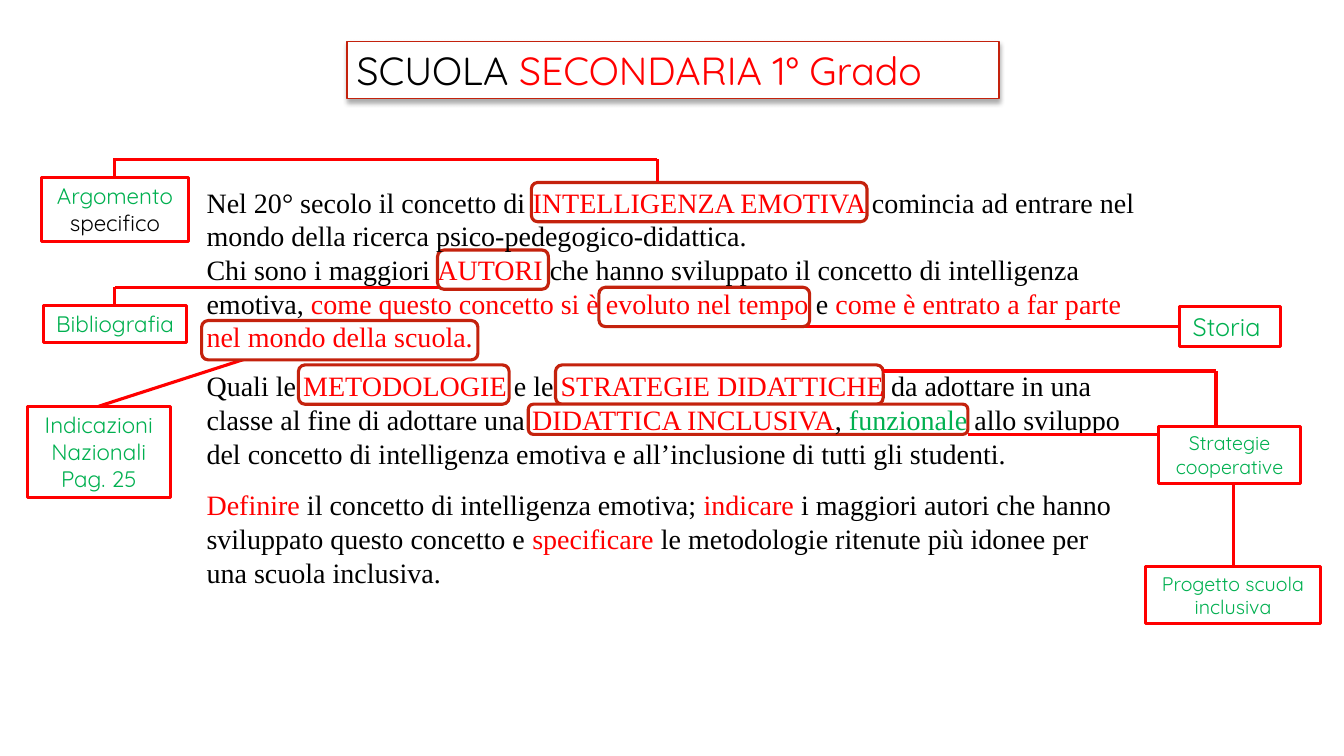
from typing import NamedTuple

from lxml import etree
from pptx import Presentation
from pptx.dml.color import RGBColor
from pptx.enum.shapes import MSO_CONNECTOR, MSO_SHAPE
from pptx.enum.text import MSO_ANCHOR, MSO_AUTO_SIZE, PP_ALIGN
from pptx.oxml import parse_xml
from pptx.oxml.ns import nsdecls, qn
from pptx.util import Emu, Pt

EMU_PER_PX = 9144  # 100 px to the inch
RED, DARK_RED, GREEN, BLACK, WHITE = "FF0000", "C4220D", "00B050", "000000", "FFFFFF"
SANS, SERIF = "Quicksand", "Times New Roman"


class Run(NamedTuple):
    text: str
    color: str = BLACK


class Paragraph(NamedTuple):
    runs: list[Run]
    format: dict = {}


class Area(NamedTuple):
    left: int
    top: int
    width: int
    height: int


class Label(NamedTuple):
    area: Area
    size: int
    paragraphs: list[list[Run]]


class Link(NamedTuple):
    start: tuple[int, int]
    end: tuple[int, int]
    label: str = ""  # label that the start is joined to
    site: int = 0


LINKS_BEHIND_TEXT = [
    Link((98, 403), (284, 343), "indicazioni", 0),
    Link((1170, 324), (682, 324), "storia", 1),
    Link((114, 285), (492, 285)),
]
LINKS_OVER_TEXT = [
    Link((652, 181), (652, 158)),
    Link((652, 158), (114, 158)),
    Link((114, 176), (114, 157), "argomento", 0),
    Link((1206, 368), (876, 368)),
    Link((1206, 423), (1206, 368)),
    Link((1223, 431), (960, 431)),
    Link((1223, 562), (1223, 431), "progetto", 0),
    Link((114, 303), (114, 285), "bibliografia", 0),
]
HIGHLIGHTS = [
    Area(527, 181, 333, 39),
    Area(434, 248, 110, 39),
    Area(594, 285, 209, 39),
    Area(200, 318, 274, 39),
    Area(296, 362, 209, 39),
    Area(551, 362, 325, 39),
    Area(524, 401, 436, 30),
]
LABELS = {
    "argomento": Label(Area(41, 176, 146, 64), 16,
                       [[Run("Argomento", GREEN), Run(" specifico")]]),
    "storia": Label(Area(1170, 304, 100, 40), 18, [[Run("Storia ", GREEN)]]),
    "indicazioni": Label(Area(27, 403, 142, 91), 16,
                         [[Run("Indicazioni Nazionali", GREEN)], [Run("Pag. 25", GREEN)]]),
    "strategie": Label(Area(1149, 423, 141, 57), 14, [[Run("Strategie cooperative", GREEN)]]),
    "progetto": Label(Area(1136, 562, 174, 57), 14, [[Run("Progetto scuola inclusiva", GREEN)]]),
    "bibliografia": Label(Area(43, 303, 142, 37), 16, [[Run("Bibliografia", GREEN)]]),
}
TITLE = [Paragraph([Run("SCUOLA "), Run("SECONDARIA 1° Grado", RED)],
                   {"alignment": PP_ALIGN.LEFT})]
BODY = [
    Paragraph([
        Run("Nel 20° secolo il concetto di "),
        Run("INTELLIGENZA EMOTIVA ", RED),
        Run("comincia ad entrare nel mondo della ricerca psico-pedegogico-didattica."),
    ]),
    Paragraph([
        Run("Chi sono i maggiori "),
        Run("AUTORI", RED),
        Run(" che hanno sviluppato il concetto di intelligenza emotiva, "),
        Run("come questo concetto si è evoluto nel tempo ", RED),
        Run("e "),
        Run("come è entrato a far parte nel mondo della scuola.", RED),
    ]),
    Paragraph([
        Run("Quali le "),
        Run("METODOLOGIE", RED),
        Run(" e le "),
        Run("STRATEGIE DIDATTICHE ", RED),
        Run("da adottare in una classe al fine di adottare una "),
        Run("DIDATTICA INCLUSIVA", RED),
        Run(", "),
        Run("funzionale", GREEN),
        Run(" allo sviluppo del concetto di intelligenza emotiva e all’inclusione "
            "di tutti gli studenti."),
    ], {"space_before": Pt(11)}),
    Paragraph([
        Run("Definire", RED),
        Run(" il concetto di intelligenza emotiva; "),
        Run("indicare", RED),
        Run(" i maggiori autori che hanno sviluppato questo concetto e "),
        Run("specificare ", RED),
        Run("le metodologie ritenute più idonee per una scuola inclusiva."),
    ], {"space_before": Pt(13)}),
]


def px(length: int) -> Emu:
    return Emu(length * EMU_PER_PX)


def rgb(color: str) -> RGBColor:
    return RGBColor.from_string(color)


def apply(target, values: dict) -> None:
    for name, value in values.items():
        setattr(target, name, value)


def style_line(line, color: str, width: float) -> None:
    line.color.rgb = rgb(color)
    line.width = Pt(width)


def add_box(slide, area: Area, color: str, width: float = 2.25, preset=MSO_SHAPE.RECTANGLE):
    box = slide.shapes.add_shape(preset, *map(px, area))
    box.shadow.inherit = False
    box.fill.solid()
    box.fill.fore_color.rgb = rgb(WHITE)
    style_line(box.line, color, width)
    return box


def write(box, paragraphs: list[Paragraph], size: int, font_name: str) -> None:
    frame = box.text_frame
    apply(frame, {"word_wrap": True, "vertical_anchor": MSO_ANCHOR.TOP,
                  "auto_size": MSO_AUTO_SIZE.SHAPE_TO_FIT_TEXT})
    for index, content in enumerate(paragraphs):
        paragraph = frame.add_paragraph() if index else frame.paragraphs[0]
        apply(paragraph, content.format)
        for text, color in content.runs:
            run = paragraph.add_run()
            run.text = text
            apply(run.font, {"size": Pt(size), "name": font_name})
            run.font.color.rgb = rgb(color)


def add_link(slide, link: Link):
    connector = slide.shapes.add_connector(
        MSO_CONNECTOR.STRAIGHT, *map(px, link.start + link.end))
    style_line(connector.line, RED, 2.25)
    etree.SubElement(connector.element.spPr, qn("a:effectLst"))
    return connector


def add_drop_shadow(box) -> None:
    effects = box.element.spPr.find(qn("a:effectLst"))
    effects.append(parse_xml(
        f'<a:outerShdw {nsdecls("a")} blurRad="{Pt(3.5)}" dist="{Pt(2.2)}" dir="5400000" '
        f'rotWithShape="0"><a:srgbClr val="{BLACK}"><a:alpha val="32000"/></a:srgbClr>'
        '</a:outerShdw>'))


def main() -> None:
    deck = Presentation()
    deck.slide_width, deck.slide_height = px(1333), px(750)
    slide = deck.slides.add_slide(deck.slide_layouts[6])

    drawn_links = [(link, add_link(slide, link)) for link in LINKS_BEHIND_TEXT]
    for area in HIGHLIGHTS:
        add_box(slide, area, DARK_RED, preset=MSO_SHAPE.ROUNDED_RECTANGLE)

    title = add_box(slide, Area(344, 41, 647, 57), DARK_RED, 1)
    add_drop_shadow(title)
    write(title, TITLE, 28, SANS)
    body = slide.shapes.add_textbox(*map(px, Area(195, 179, 941, 414)))
    write(body, BODY, 20, SERIF)

    drawn_links += [(link, add_link(slide, link)) for link in LINKS_OVER_TEXT]
    label_boxes = {}
    for name, label in LABELS.items():
        label_boxes[name] = add_box(slide, label.area, RED)
        centred = [Paragraph(runs, {"alignment": PP_ALIGN.CENTER}) for runs in label.paragraphs]
        write(label_boxes[name], centred, label.size, SANS)
    for link, connector in drawn_links:
        if link.label:
            connector.begin_connect(label_boxes[link.label], link.site)

    deck.save("out.pptx")


if __name__ == "__main__":
    main()
